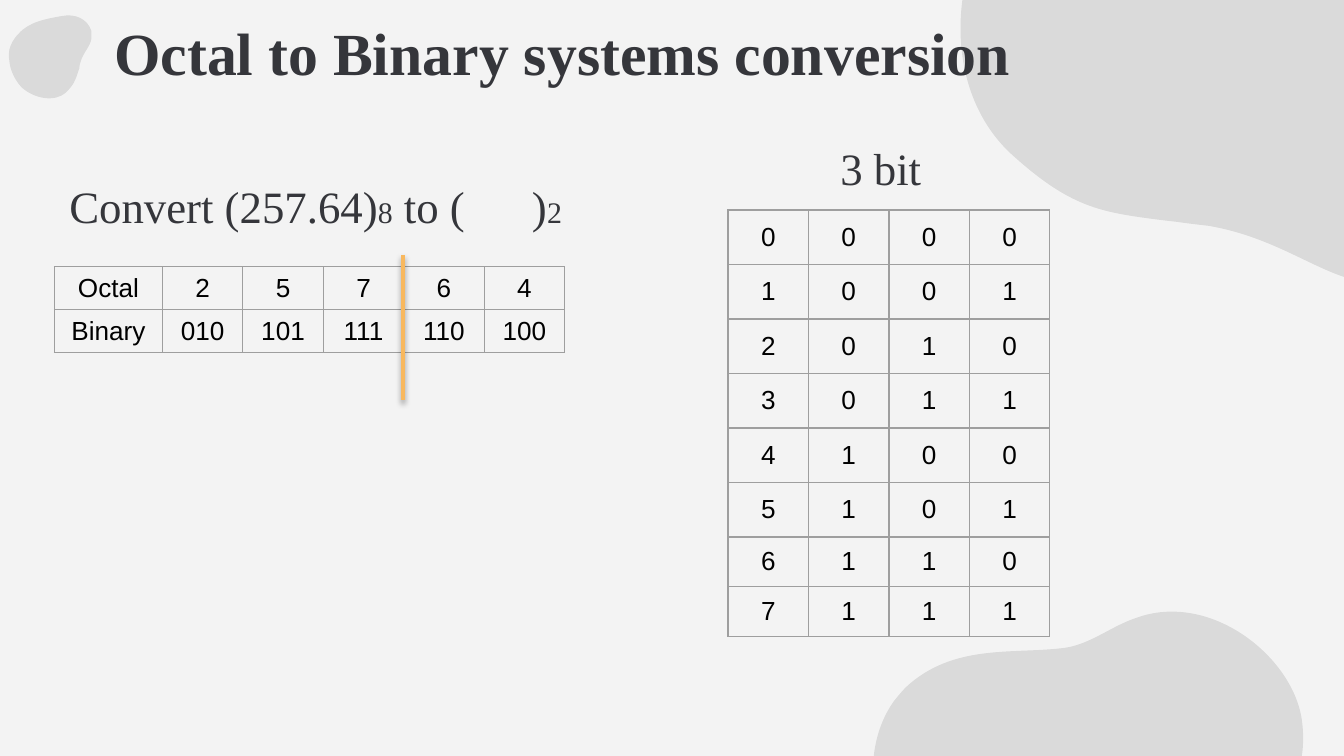
from dataclasses import dataclass

from lxml import etree
from pptx import Presentation
from pptx import util as u
from pptx.dml.color import RGBColor
from pptx.enum import shapes, text
from pptx.oxml import ns
from pptx.util import Cm

INK, BLACK, GRID, ORANGE, PAPER = "35363B", "000000", "9E9E9E", "F8B85E", "F3F3F3"
SERIF, SANS = "Times New Roman", "Arial"
BLOB_UNIT = Cm(0.0254)

Point = tuple[float, float]


@dataclass
class Blob:
    """Closed outline: a start, then Bezier triples, in blob units."""
    start: Point
    curves: list[tuple[Point, Point, Point]]


@dataclass
class Label:
    left: float
    top: float
    width: float
    height: float
    runs: list[tuple[str, int]]
    bold: bool = False
    align: text.PP_ALIGN = text.PP_ALIGN.LEFT


@dataclass
class Grid:
    left: float
    top: float
    widths: list[float]
    heights: list[float]
    rows: list[list[str]]


def rgb(value: str) -> RGBColor:
    return RGBColor.from_string(value)


def add_child(parent, tag: str, **attributes: str):
    child = etree.SubElement(parent, ns.qn(tag))
    for key, value in attributes.items():
        child.set(key, value)
    return child


def add_run(paragraph, words: str, size: int, face: str, color: str, bold: bool = False) -> None:
    run = paragraph.add_run()
    run.text = words
    run.font.size, run.font.name, run.font.bold = u.Pt(size), face, bold
    run.font.color.rgb = rgb(color)


def curve_segments(shape) -> None:
    """Turn every three straight segments into one Bezier segment."""
    segments = list(shape._element.iter(ns.qn("a:lnTo")))
    for first in range(0, len(segments), 3):
        curve = etree.Element(ns.qn("a:cubicBezTo"))
        segments[first].addprevious(curve)
        for segment in segments[first:first + 3]:
            curve.append(segment[0])
            segment.getparent().remove(segment)


def draw_blob(slide, blob: Blob) -> None:
    builder = slide.shapes.build_freeform(*blob.start, scale=BLOB_UNIT / 10)
    builder = slide.shapes.build_freeform(*(v * BLOB_UNIT for v in blob.start))
    builder.add_line_segments(
        [(x * BLOB_UNIT, y * BLOB_UNIT) for curve in blob.curves for x, y in curve], close=True)
    shape = builder.convert_to_shape()
    curve_segments(shape)
    shape.shadow.inherit = False
    shape.line.fill.background()
    shape.fill.solid()
    shape.fill.fore_color.rgb = rgb(BLACK)
    color = shape._element.spPr.find(".//" + ns.qn("a:srgbClr"))
    add_child(color, "a:alpha", val="10000")


def draw_label(slide, label: Label) -> None:
    box = slide.shapes.add_textbox(Cm(label.left), Cm(label.top), Cm(label.width), Cm(label.height))
    frame = box.text_frame
    frame.word_wrap = True
    frame.margin_left = frame.margin_right = Cm(0.25)
    frame.margin_top = frame.margin_bottom = Cm(0.25)
    paragraph = frame.paragraphs[0]
    paragraph.alignment = label.align
    for words, size in label.runs:
        add_run(paragraph, words, size, SERIF, INK, label.bold)


def draw_borders(cell) -> None:
    properties = cell._tc.get_or_add_tcPr()
    for side in "LRTB":
        line = add_child(properties, f"a:ln{side}", w=str(u.Pt(0.75)))
        add_child(add_child(line, "a:solidFill"), "a:srgbClr", val=GRID)


def draw_grid(slide, grid: Grid) -> None:
    table = slide.shapes.add_table(
        len(grid.rows), len(grid.widths), Cm(grid.left), Cm(grid.top),
        Cm(sum(grid.widths)), Cm(sum(grid.heights))).table
    table.first_row = table.horz_banding = False
    for column, width in zip(table.columns, grid.widths):
        column.width = Cm(width)
    for row, height, values in zip(table.rows, grid.heights, grid.rows):
        row.height = Cm(height)
        for cell, value in zip(row.cells, values):
            draw_borders(cell)
            cell.fill.background()
            cell.vertical_anchor = text.MSO_ANCHOR.MIDDLE
            cell.margin_top = cell.margin_bottom = Cm(0.1)
            paragraph = cell.text_frame.paragraphs[0]
            paragraph.alignment = text.PP_ALIGN.CENTER
            add_run(paragraph, value, 14, SANS, BLACK)


def draw_radix_point(slide, x: float, top: float, bottom: float) -> None:
    line = slide.shapes.add_connector(
        shapes.MSO_CONNECTOR.STRAIGHT, Cm(x), Cm(top), Cm(x), Cm(bottom))
    line.line.color.rgb = rgb(ORANGE)
    line.line.width = u.Pt(2)
    effects = add_child(line._element.spPr, "a:effectLst")
    shadow = add_child(effects, "a:outerShdw", blurRad=str(u.Pt(3.1)),
                       dist=str(u.Pt(1.6)), dir="5400000", rotWithShape="0")
    color = add_child(shadow, "a:srgbClr", val=BLACK)
    add_child(color, "a:alpha", val="38000")


BLOBS = [
    # Bottom right
    Blob((665, 522), [
        ((669, 517), (673, 512), (678, 508)), ((713, 479), (756, 487), (793, 482)),
        ((812, 479), (827, 466), (845, 460)), ((901, 439), (964, 490), (969, 538)),
        ((972, 563), (965, 586), (950, 608)), ((940, 622), (926, 636), (908, 649)),
        ((863, 682), (832, 707), (768, 704)), ((703, 700), (662, 636), (650, 580)),
        ((650, 580), (646, 549), (665, 522))]),
    # Top right
    Blob((927, -167), [
        ((951, -164), (980, -155), (1007, -134)), ((1068, -87), (1092, -6), (1112, 59)),
        ((1133, 124), (1108, 183), (1053, 205)), ((1040, 210), (1027, 211), (1016, 210)),
        ((982, 205), (952, 177), (899, 168)), ((890, 167), (882, 166), (875, 165)),
        ((866, 164), (858, 163), (851, 162)), ((815, 157), (793, 151), (754, 116)),
        ((700, 68), (702, -28), (758, -92)), ((814, -156), (875, -166), (875, -166)),
        ((875, -166), (897, -171), (927, -167))]),
    # Top left
    Blob((7, 37), [
        ((8, 33), (10, 29), (14, 25)), ((22, 16), (35, 14), (46, 12)),
        ((56, 10), (65, 14), (68, 23)), ((68, 26), (68, 27), (68, 29)),
        ((67, 35), (62, 39), (60, 46)), ((59.5, 47.5), (59, 49), (59, 51)),
        ((58.5, 52), (58, 53), (58, 54)), ((56, 60), (55, 63), (49, 69)),
        ((41, 76), (26, 74), (16, 65)), ((7, 55), (7, 45), (7, 45)),
        ((7, 45), (6, 42), (7, 37))]),
]

TITLE = Label(1.91, 0.05, 22.66, 2.34, [("Octal to Binary systems conversion", 32)], bold=True)
TASK = Label(1.06, 3.12, 23.29, 1.7,
             [("Convert (257.64)", 24), ("8", 16), (" to (      )", 24), ("2", 16)],
             align=text.PP_ALIGN.JUSTIFY)
BIT_HEADING = Label(13.43, 2.41, 6.43, 1.17, [("3 bit", 24)], align=text.PP_ALIGN.CENTER)

OCTAL_DIGITS = "25764"
CONVERSION = Grid(1.03, 5.04, [2.04] + [1.52] * 5, [0.81] * 2, [
    ["Octal", *OCTAL_DIGITS],
    ["Binary", *(f"{int(digit):03b}" for digit in OCTAL_DIGITS)]])
BIT_TABLE = Grid(13.76, 3.97, [1.52] * 4, [1.03] * 6 + [0.94] * 2,
                 [[str(n), *f"{n:03b}"] for n in range(8)])


def main() -> None:
    deck = Presentation()
    deck.slide_width, deck.slide_height = Cm(25.4), Cm(14.29)
    slide = deck.slides.add_slide(deck.slide_layouts[6])
    slide.background.fill.solid()
    slide.background.fill.fore_color.rgb = rgb(PAPER)

    # Backdrop
    for blob in BLOBS:
        draw_blob(slide, blob)
    # Title and task
    draw_label(slide, TITLE)
    draw_label(slide, TASK)
    # Tables
    draw_grid(slide, CONVERSION)
    draw_grid(slide, BIT_TABLE)
    draw_label(slide, BIT_HEADING)
    # Split between whole and fractional digits
    draw_radix_point(slide, 7.62, 4.82, 7.57)
    deck.save("out.pptx")


if __name__ == "__main__":
    main()
